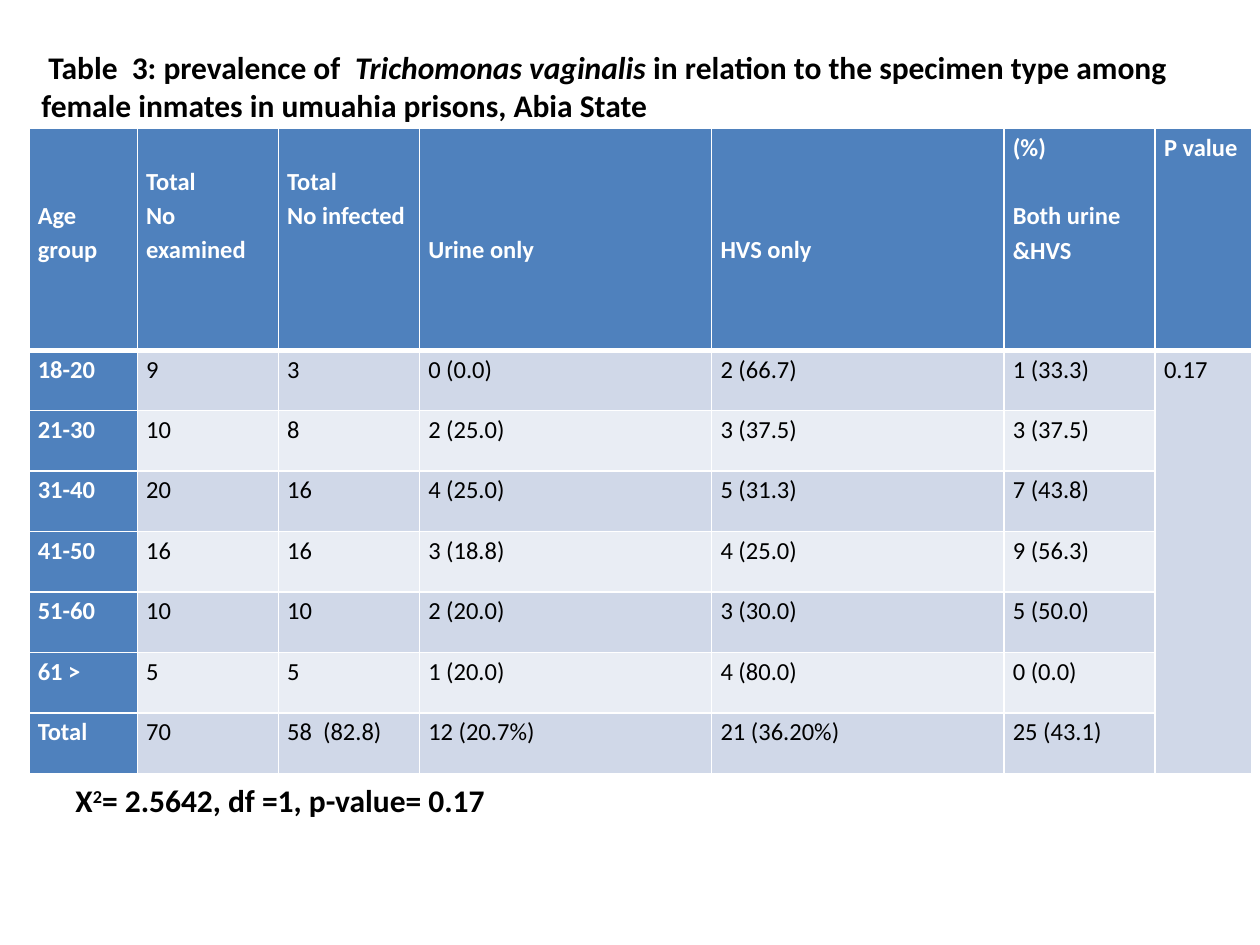
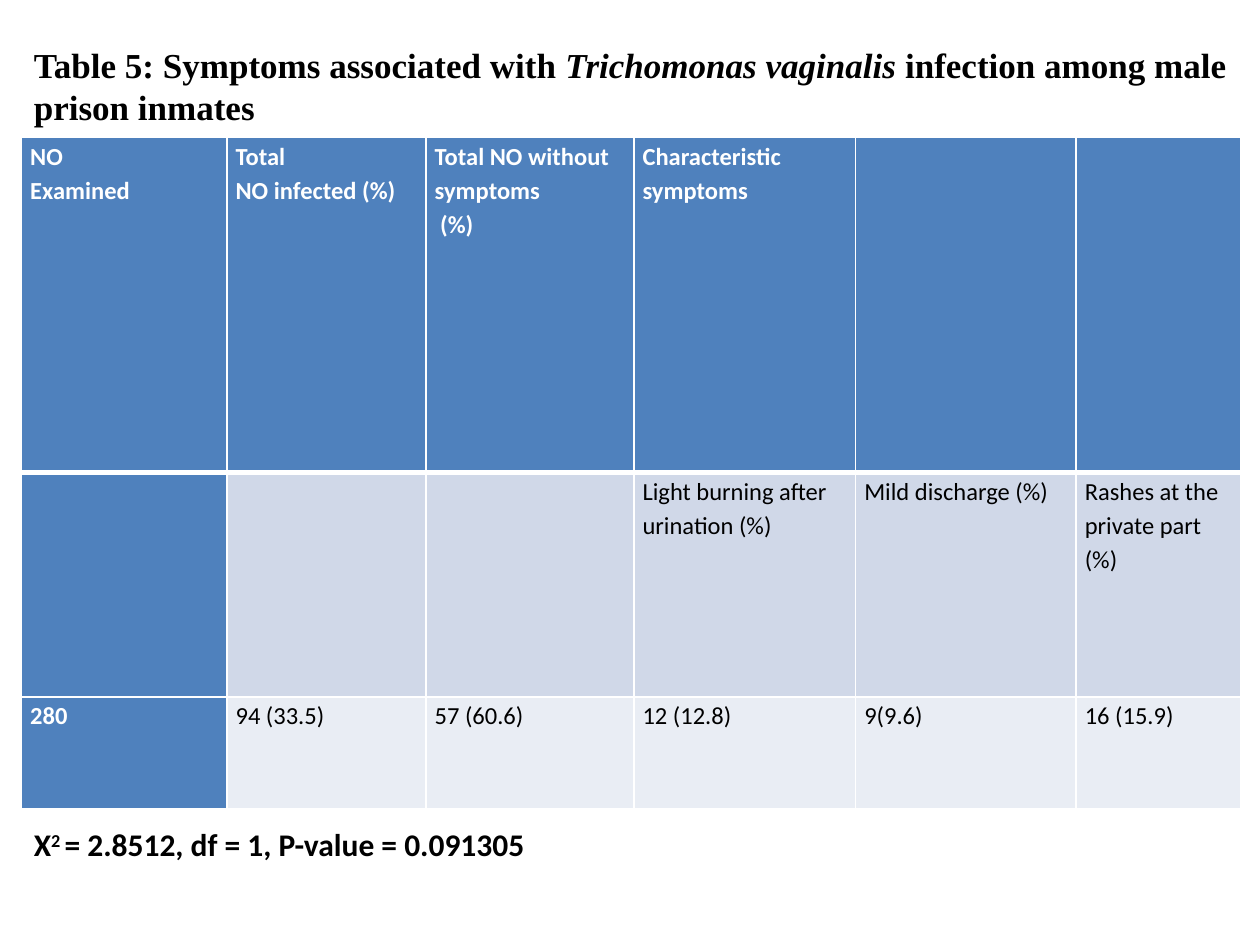
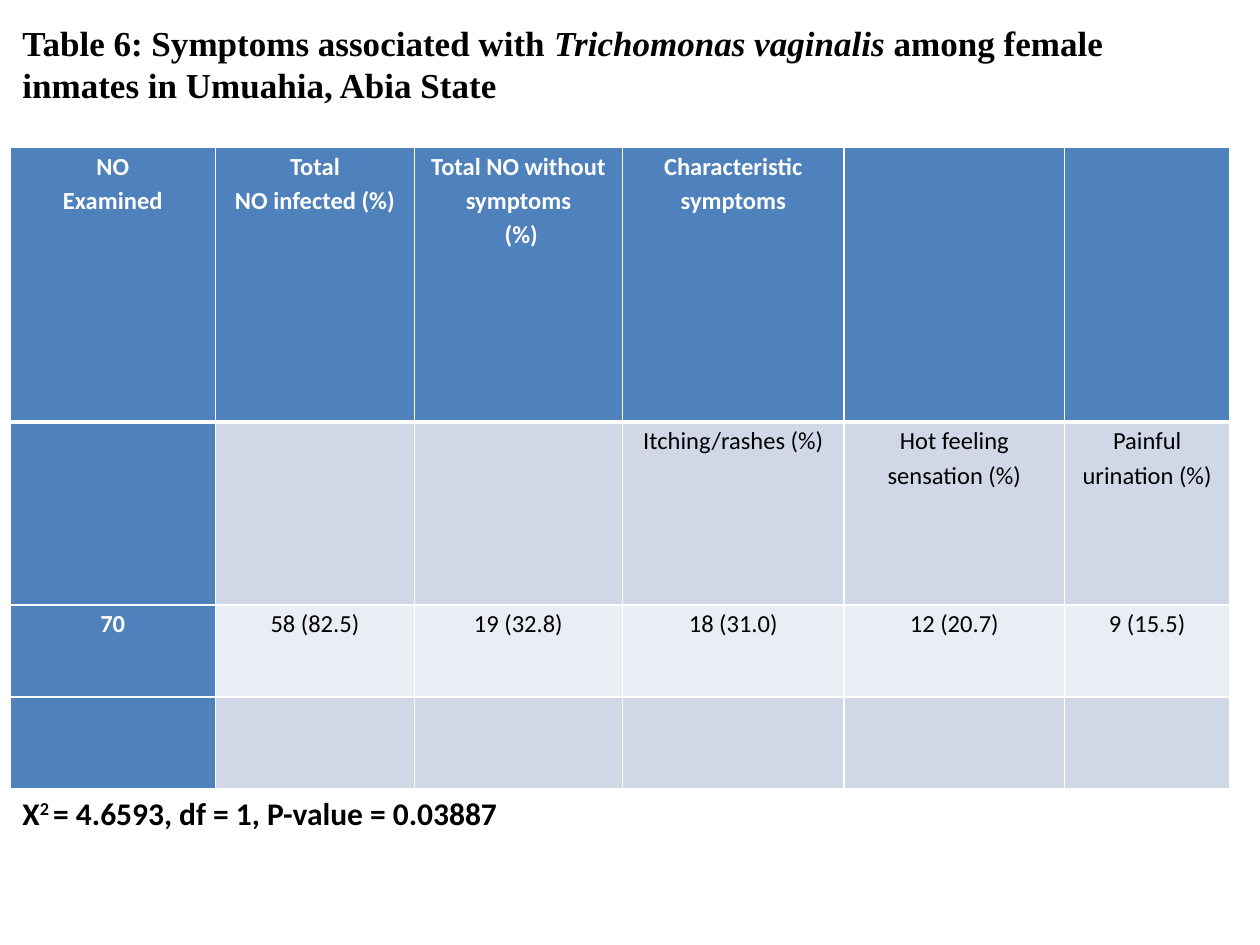
from lxml import etree
from pptx import Presentation
from pptx.dml.color import RGBColor
from pptx.enum.text import MSO_ANCHOR, MSO_AUTO_SIZE, PP_ALIGN
from pptx.oxml.ns import qn
from pptx.util import Inches, Pt

LEFT, CENTER = PP_ALIGN.LEFT, PP_ALIGN.CENTER
TOP, MIDDLE = MSO_ANCHOR.TOP, MSO_ANCHOR.MIDDLE
GROW = MSO_AUTO_SIZE.SHAPE_TO_FIT_TEXT

BODY_FONT, SERIF_FONT = "Calibri", "Times New Roman"
BLACK, WHITE = "000000", "FFFFFF"
HEADER_FILL, BAND_FILLS = "4F81BD", ("D0D8E8", "E9EDF4")
LINE = 0.27  # height of one table text line, in inches

ITALIC, SUPER = {"italic": True}, {"raised": True}


def color(hex_code):
    return RGBColor.from_string(hex_code)


def write(tf, text, size=18, font=BODY_FONT, fill=BLACK, bold=True,
          align=LEFT, spacing=None, gap=0):
    """Fill a frame; each paragraph is a string or a list of (text, format) runs."""
    paragraphs = text if isinstance(text, list) else text.split("\n")
    for i, runs in enumerate(paragraphs):
        p = tf.paragraphs[0] if i == 0 else tf.add_paragraph()
        p.alignment = align
        if spacing:
            p.line_spacing = spacing
        if i and gap:
            p.space_before = Pt(gap)
        for words, style in [(runs, {})] if isinstance(runs, str) else runs:
            r = p.add_run()
            r.text = words
            r.font.name, r.font.size, r.font.bold = font, Pt(size), bold
            r.font.italic = style.get("italic")
            r.font.color.rgb = color(fill)
            if style.get("raised"):
                r._r.get_or_add_rPr().set("baseline", "30000")


def set_borders(cell, **widths):
    tcPr = cell._tc.get_or_add_tcPr()
    for side in "LRTB":
        ln = etree.SubElement(tcPr, qn("a:ln" + side), w=str(Pt(widths.get(side, 1))))
        solid = etree.SubElement(ln, qn("a:solidFill"))
        etree.SubElement(solid, qn("a:srgbClr"), val=WHITE)


class Deck:
    def __init__(self):
        self.prs = Presentation()
        self.prs.slide_width, self.prs.slide_height = Inches(10), Inches(7.5)
        self.s = None

    def new_slide(self):
        self.s = self.prs.slides.add_slide(self.prs.slide_layouts[6])

    def text(self, box, text, wrap=True, anchor=TOP, **style):
        sp = self.s.shapes.add_textbox(*map(Inches, box))
        tf = sp.text_frame
        tf.word_wrap, tf.auto_size, tf.vertical_anchor = wrap, GROW, anchor
        write(tf, text, **style)

    def title(self, box, before, after, **style):
        runs = [(before, {}), ("Trichomonas vaginalis", ITALIC), (after, {})]
        self.text(box, [runs], **style)

    def statistic(self, left, top, width, result, power="2 ", wrap=False):
        runs = [("X", {}), (power, SUPER), (result, {})]
        self.text((left, top, width, 0.39), [runs], wrap=wrap)

    def table(self, left, top, widths, heights, rows, align=LEFT, drops=(), gaps=()):
        """drops: lines above each header; gaps: points between its paragraphs."""
        frame = self.s.shapes.add_table(
            len(heights), len(widths), Inches(left), Inches(top),
            Inches(sum(widths)), Inches(sum(heights)))
        table = frame.table
        table.first_col = True
        for column, width in zip(table.columns, widths):
            column.width = Inches(width)
        for row, height in zip(table.rows, heights):
            row.height = Inches(height)
        for i, values in enumerate(rows):
            for j, value in enumerate(values):
                cell = table.cell(i, j)
                heading = i == 0 or j == 0
                set_borders(cell, B=3 if i == 0 else 1, T=3 if i == 1 else 1)
                cell.fill.solid()
                cell.fill.fore_color.rgb = color(
                    HEADER_FILL if heading else BAND_FILLS[(i - 1) % 2])
                cell.margin_left = cell.margin_right = Inches(0.07)
                cell.margin_bottom = 0
                cell.margin_top = Inches(drops[j] * LINE if drops and i == 0 else 0)
                if value:
                    write(cell.text_frame, value, size=14, bold=heading,
                          fill=WHITE if heading else BLACK, align=align,
                          spacing=1.15, gap=gaps[j] if gaps and i == 0 else 0)
        return table


SYMPTOM_WIDTHS = [1.63, 1.58, 1.65, 1.76, 1.75, 1.31]
SYMPTOM_HEADER = ["NO\nExamined", "Total\nNO infected (%)",
                  "Total NO without symptoms\n (%)", "Characteristic symptoms", "", ""]


def specimen_slide(deck):
    deck.new_slide()
    deck.title((0.23, 0.33, 9.75, 0.68), " Table  3: prevalence of  ",
               " in relation to the specimen type among female inmates"
               " in umuahia prisons, Abia State")
    rows = [
        ["Age group", "Total\nNo examined", "Total\nNo infected", "Urine only",
         "HVS only", "(%)\nBoth urine &HVS", "P value"],
        ["18-20", "9", "3", "0 (0.0)", "2 (66.7)", "1 (33.3)", "0.17"],
        ["21-30", "10", "8", "2 (25.0)", "3 (37.5)", "3 (37.5)", ""],
        ["31-40", "20", "16", "4 (25.0)", "5 (31.3)", "7 (43.8)", ""],
        ["41-50", "16", "16", "3 (18.8)", "4 (25.0)", "9 (56.3)", ""],
        ["51-60", "10", "10", "2 (20.0)", "3 (30.0)", "5 (50.0)", ""],
        ["61 >", "5", "5", "1 (20.0)", "4 (80.0)", "0 (0.0)", ""],
        ["Total", "70", "58  (82.8)", "12 (20.7%)", "21 (36.20%)", "25 (43.1)", ""],
    ]
    table = deck.table(0.23, 1.02, [0.86, 1.12, 1.12, 2.32, 2.32, 1.2, 0.77],
                       [1.76] + [0.48] * 7, rows,
                       drops=(2, 1, 1, 3, 3, 0, 0), gaps=(0, 0, 0, 0, 0, 19.6, 0))
    table.cell(1, 6).merge(table.cell(7, 6))
    deck.statistic(0.5, 6.15, 3.69, "= 2.5642, df =1, p-value= 0.17", power="2")


def male_symptoms_slide(deck):
    deck.new_slide()
    deck.title((0.17, 0.29, 9.67, 0.77), "Table 5: Symptoms associated with ",
               " infection among male prison inmates",
               size=20, font=SERIF_FONT, anchor=MIDDLE)
    rows = [
        SYMPTOM_HEADER,
        ["", "", "", "Light burning after urination (%)", "Mild discharge (%)",
         "Rashes at the private part (%)"],
        ["280", "94 (33.5)", "57 (60.6)", "12 (12.8)", "9(9.6)", "16 (15.9)"],
    ]
    deck.table(0.17, 1.09, SYMPTOM_WIDTHS, [2.66, 1.78, 0.89], rows)
    deck.statistic(0.17, 6.5, 4.41, "= 2.8512, df = 1, P-value = 0.091305")


def female_symptoms_slide(deck):
    deck.new_slide()
    deck.title((0.08, 0.12, 9.17, 0.77), "Table 6: Symptoms associated with ",
               " among female inmates in Umuahia, Abia State",
               size=20, font=SERIF_FONT, anchor=MIDDLE)
    rows = [
        SYMPTOM_HEADER,
        ["", "", "", "Itching/rashes (%)", "Hot feeling sensation (%)",
         "Painful urination (%)"],
        ["70", "58 (82.5)", "19 (32.8)", "18 (31.0)", "12 (20.7)", "9 (15.5)"],
        [""] * 6,
    ]
    deck.table(0.08, 1.17, SYMPTOM_WIDTHS, [2.18, 1.45, 0.73, 0.73], rows, align=CENTER)
    deck.statistic(0.08, 6.25, 5, "= 4.6593, df = 1, P-value = 0.03887", wrap=True)


def main():
    deck = Deck()
    specimen_slide(deck)
    male_symptoms_slide(deck)
    female_symptoms_slide(deck)
    deck.prs.save("out.pptx")


if __name__ == "__main__":
    main()
